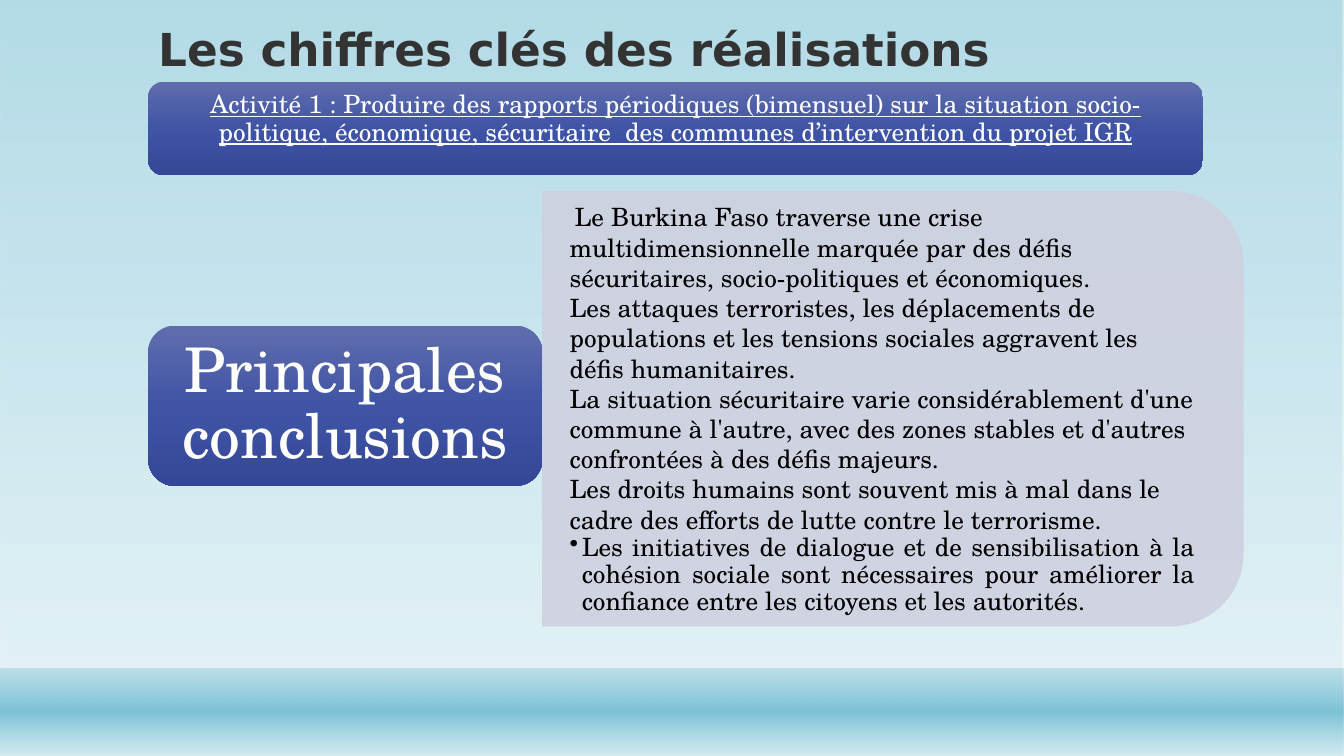
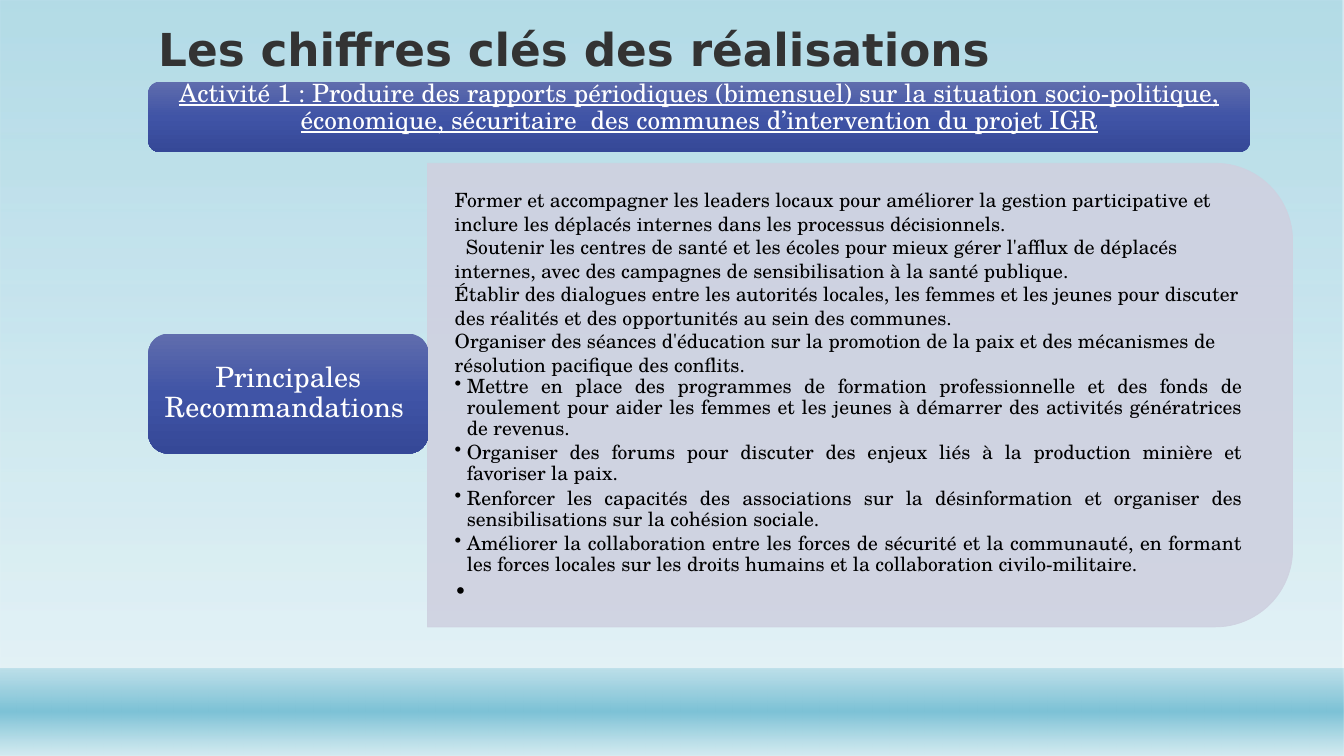
"""Build two slides on the activity reports: main findings and recommendations."""
import pptx
import pptx.dml.color
import pptx.enum.shapes
import pptx.enum.text
import pptx.oxml
import pptx.oxml.ns
import pptx.util

Inches = pptx.util.Inches
Kind = pptx.enum.shapes.MSO_SHAPE
Align = pptx.enum.text.PP_ALIGN
Anchor = pptx.enum.text.MSO_ANCHOR

TITLE = "Les chiffres clés des réalisations"
BANNER = (
    "Activité 1 : Produire des rapports périodiques (bimensuel) sur la situation "
    "socio-politique, économique, sécuritaire  des communes d’intervention du projet IGR"
)
SERIF, SANS = "TeX Gyre Schola", "DejaVu Sans"
WHITE, BLACK, DARK, PANEL = "FFFFFF", "000000", "333333", "CFD1E0"
BLUE = [(0, "606DAD", 100), (50, "4054A6", 100), (100, "354897", 100)]
SKY = [(0, "7DC2D6", 58), (88, "D4EBF1", 65)]
SEA = [(1, "7DC2D6", 38), (49, "7DC2D6", 100), (100, "D4EBF1", 89)]
LEFT, TOP = 1.47, 0.81
CORNER = 0.0488
HANG = 0.12

PAGES = [
    {
        "banner": (10.46, 0.93),
        "label": ("Principales conclusions ", 44, 3.23, 3.91, 1.59, 0.18),
        "panel": (5.38, 1.9, 6.95, 4.31),
        "size": 18,
        "plain": [
            (0.05, "Le Burkina Faso traverse une crise multidimensionnelle marquée par des défis sécuritaires, socio-politiques et économiques."),
            (0, "Les attaques terroristes, les déplacements de populations et les tensions sociales aggravent les défis humanitaires."),
            (0, "La situation sécuritaire varie considérablement d'une commune à l'autre, avec des zones stables et d'autres confrontées à des défis majeurs."),
            (0, "Les droits humains sont souvent mis à mal dans le cadre des efforts de lutte contre le terrorisme."),
        ],
        "dots": [
            "Les initiatives de dialogue et de sensibilisation à la cohésion sociale sont nécessaires pour améliorer la confiance entre les citoyens et les autorités.",
        ],
        "end": [],
    },
    {
        "banner": (10.93, 0.7),
        "label": ("Principales Recommandations ", 20, 3.31, 2.78, 1.19, 0.08),
        "panel": (4.24, 1.62, 8.58, 4.6),
        "size": 14,
        "plain": [
            (0, "Former et accompagner les leaders locaux pour améliorer la gestion participative et inclure les déplacés internes dans les processus décisionnels."),
            (0.11, "Soutenir les centres de santé et les écoles pour mieux gérer l'afflux de déplacés internes, avec des campagnes de sensibilisation à la santé publique."),
            (0, "Établir des dialogues entre les autorités locales, les femmes et les jeunes pour discuter des réalités et des opportunités au sein des communes."),
            (0, "Organiser des séances d'éducation sur la promotion de la paix et des mécanismes de résolution pacifique des conflits."),
        ],
        "dots": [
            "Mettre en place des programmes de formation professionnelle et des fonds de roulement pour aider les femmes et les jeunes à démarrer des activités génératrices de revenus.",
            "Organiser des forums pour discuter des enjeux liés à la production minière et favoriser la paix.",
            "Renforcer les capacités des associations sur la désinformation et organiser des sensibilisations sur la cohésion sociale.",
            "Améliorer la collaboration entre les forces de sécurité et la communauté, en formant les forces locales sur les droits humains et la collaboration civilo-militaire.",
        ],
        "end": [(0, "•")],
    },
]


def color(code):
    return pptx.dml.color.RGBColor.from_string(code)


def tint(node, alpha):
    mark = pptx.oxml.parse_xml(f'<a:alpha {pptx.oxml.ns.nsdecls("a")} val="{alpha * 1000}"/>')
    node.append(mark)


def shade(shape, stops):
    marks = "".join(
        f'<a:gs pos="{pos * 1000}"><a:srgbClr val="{code}"><a:alpha val="{alpha * 1000}"/></a:srgbClr></a:gs>'
        for pos, code, alpha in stops
    )
    grad = pptx.oxml.parse_xml(
        f'<a:gradFill {pptx.oxml.ns.nsdecls("a")} rotWithShape="1"><a:gsLst>{marks}</a:gsLst>'
        '<a:lin ang="5400000" scaled="0"/></a:gradFill>'
    )
    shape.fill.background()
    old = shape.element.spPr.find(pptx.oxml.ns.qn("a:noFill"))
    shape.element.spPr.replace(old, grad)


def draw(slide, kind, *box):
    shape = slide.shapes.add_shape(kind, *map(Inches, box))
    shape.shadow.inherit = False
    shape.line.fill.background()
    return shape


def block(slide, kind, box, stops):
    shape = draw(slide, kind, *box)
    shade(shape, stops)
    return shape


def frame(shape, sides, ends, base, anchor=Anchor.MIDDLE):
    text = shape.text_frame
    text.word_wrap = True
    text.vertical_anchor = anchor
    text.margin_left = text.margin_right = Inches(sides)
    text.margin_top, text.margin_bottom = Inches(ends), Inches(base)
    return text


def style(para, words, size, code, face=SERIF, align=Align.CENTER, pitch=0.9):
    para.text = words
    para.alignment = align
    para.line_spacing = pitch
    font = para.font
    font.size, font.name = pptx.util.Pt(size), face
    font.color.rgb = color(code)
    return font


def indent(para, left, first):
    props = para._p.get_or_add_pPr()
    props.set("marL", str(Inches(left)))
    props.set("indent", str(Inches(first)))
    return props


def backdrop(slide, layout):
    for box, stops in (((0, 0, 13.33, 7.5), SKY), ((0, 6.63, 13.33, 0.87), SEA)):
        layout.shapes.element.append(block(slide, Kind.RECTANGLE, box, stops).element)


def panel(slide, page):
    left, top, wide, high = page["panel"]
    back = draw(slide, Kind.ROUND_2_SAME_RECTANGLE,
                left + (wide - high) / 2, top + (high - wide) / 2, high, wide)
    back.rotation = 90
    back.fill.solid()
    back.fill.fore_color.rgb = color(PANEL)
    back.line.color.rgb = color(PANEL)
    back.line.width = pptx.util.Pt(0.5)
    for node in back.element.spPr.iter(pptx.oxml.ns.qn("a:srgbClr")):
        tint(node, 90)
    edge = high * CORNER
    box = slide.shapes.add_textbox(*map(Inches, (left, top + edge, wide - edge, high - 2 * edge)))
    text = frame(box, 0.27, 0.14, 0.14)
    rows = [(False, *row) for row in page["plain"]]
    rows += [(True, 0, words) for words in page["dots"]]
    rows += [(False, *row) for row in page["end"]]
    for spot, (dot, first, words) in enumerate(rows):
        para = text.add_paragraph() if spot else text.paragraphs[0]
        if dot:
            props = indent(para, HANG, -HANG)
            props.append(pptx.oxml.parse_xml(f'<a:buChar {pptx.oxml.ns.nsdecls("a")} char="•"/>'))
            para.space_after = pptx.util.Pt(round(page["size"] * 0.15, 1))
        else:
            indent(para, 0, first)
        style(para, words, page["size"], BLACK,
              align=Align.JUSTIFY if dot else Align.LEFT, pitch=0.9 if dot else 1.0)


def build(slide, page):
    title = slide.shapes.add_textbox(*map(Inches, (LEFT, 0.29, 10.4, 0.52)))
    text = frame(title, 0.1, 0.05, 0.05, Anchor.BOTTOM)
    style(text.paragraphs[0], TITLE, 32.4, DARK, SANS, Align.LEFT).bold = True

    banner = block(slide, Kind.ROUNDED_RECTANGLE, (LEFT, TOP, *page["banner"]), BLUE)
    text = frame(banner, 0.07, 0.04, 0.22)
    style(text.paragraphs[0], BANNER, 18, WHITE).underline = True

    panel(slide, page)

    words, size, top, wide, high, pad = page["label"]
    label = block(slide, Kind.ROUNDED_RECTANGLE, (LEFT, top, wide, high), BLUE)
    text = frame(label, pad, pad / 2, pad / 2)
    style(text.paragraphs[0], words, size, WHITE)


def main():
    deck = pptx.Presentation()
    deck.slide_width, deck.slide_height = Inches(13.33), Inches(7.5)
    layout = deck.slide_layouts[6]
    for spot, page in enumerate(PAGES):
        slide = deck.slides.add_slide(layout)
        if not spot:
            backdrop(slide, layout)
        build(slide, page)
    deck.save("out.pptx")


if __name__ == "__main__":
    main()
